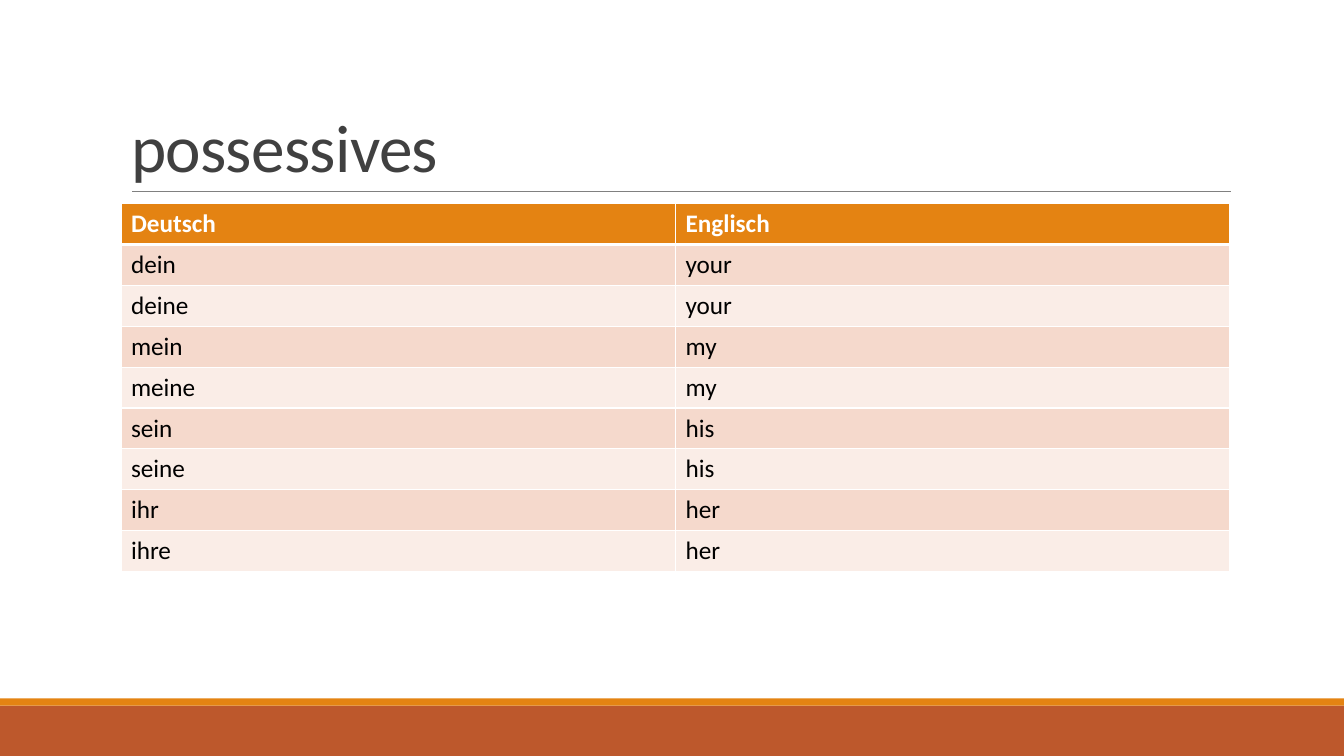
from dataclasses import dataclass

from lxml import etree
from pptx import Presentation
from pptx.dml.color import RGBColor
from pptx.enum.shapes import MSO_CONNECTOR, MSO_SHAPE
from pptx.enum.text import MSO_ANCHOR, MSO_AUTO_SIZE, PP_ALIGN
from pptx.oxml.ns import qn
from pptx.util import Inches, Pt

RECT = MSO_SHAPE.RECTANGLE
LINE = MSO_CONNECTOR.STRAIGHT
BOTTOM = MSO_ANCHOR.BOTTOM
FIXED = MSO_AUTO_SIZE.NONE
LEFT = PP_ALIGN.LEFT


@dataclass(frozen=True)
class Theme:
    font: str = "Calibri"
    head: int = 48
    body: int = 18
    rust: str = "BD582C"
    gold: str = "E48312"
    rule: str = "808080"
    title: str = "404040"
    ink: str = "000000"
    white: str = "FFFFFF"
    bands: tuple = ("FAEDE7", "F5D9CC")


theme = Theme()


def write(frame, text, size=theme.body, color=theme.ink, bold=False, track=0, lead=1):
    """Put one formatted run in a text frame; track is in points."""
    par = frame.paragraphs[0]
    par.alignment, par.line_spacing = LEFT, lead
    run = par.add_run()
    run.text = text
    font = run.font
    font.name, font.size, font.bold = theme.font, Pt(size), bold
    font.color.rgb = RGBColor.from_string(color)
    if track:
        run._r.get_or_add_rPr().set("spc", str(int(track * 100)))


def edge(cell, side, width):
    """Draw one white border of a cell; width is in points."""
    line = etree.SubElement(cell._tc.get_or_add_tcPr(), qn(f"a:ln{side}"), w=str(Pt(width)))
    fill = etree.SubElement(line, qn("a:solidFill"))
    etree.SubElement(fill, qn("a:srgbClr"), val=theme.white)


deck = Presentation()
deck.slide_width, deck.slide_height = Inches(13.33), Inches(7.5)
wide, high = deck.slide_width, deck.slide_height
slide = deck.slides.add_slide(deck.slide_layouts[5])
shapes = slide.shapes

# Footer bands
for top, tall, color in ((7, 0.5, theme.rust), (6.93, 0.07, theme.gold)):
    band = shapes.add_shape(RECT, 0, Inches(top), wide, Inches(tall))
    band.shadow.inherit = False
    band.fill.solid()
    band.fill.fore_color.rgb = RGBColor.from_string(color)
    band.line.fill.background()

# Title and its rule
left, span = Inches(1.2), Inches(11)
rule = shapes.add_connector(LINE, Inches(1.31), Inches(1.9), Inches(12.21), Inches(1.9))
rule.line.color.rgb = RGBColor.from_string(theme.rule)
rule.line.width = Pt(0.5)
etree.SubElement(rule._element.spPr, qn("a:effectLst"))

title = shapes.title
title.left, title.top, title.width, title.height = left, Inches(0.31), span, Inches(1.59)
frame = title.text_frame
frame.auto_size, frame.word_wrap, frame.vertical_anchor = FIXED, True, BOTTOM
write(frame, "possessives", size=theme.head, color=theme.title, track=-0.5, lead=0.85)

# Word table
words = (
    ("Deutsch", "Englisch"),
    ("dein", "your"),
    ("deine", "your"),
    ("mein", "my"),
    ("meine", "my"),
    ("sein", "his"),
    ("seine", "his"),
    ("ihr", "her"),
    ("ihre", "her"),
)
table = shapes.add_table(len(words), 2, left, Inches(2.02), span, Inches(3.65)).table
for row, pair in enumerate(words):
    head = row == 0
    for col, word in enumerate(pair):
        cell = table.cell(row, col)
        for side in "LRTB":
            thick = (head and side == "B") or (row == 1 and side == "T")
            edge(cell, side, 3 if thick else 1)
        cell.fill.solid()
        tint = theme.gold if head else theme.bands[row % 2]
        cell.fill.fore_color.rgb = RGBColor.from_string(tint)
        write(cell.text_frame, word, color=theme.white if head else theme.ink, bold=head)

deck.save("out.pptx")
